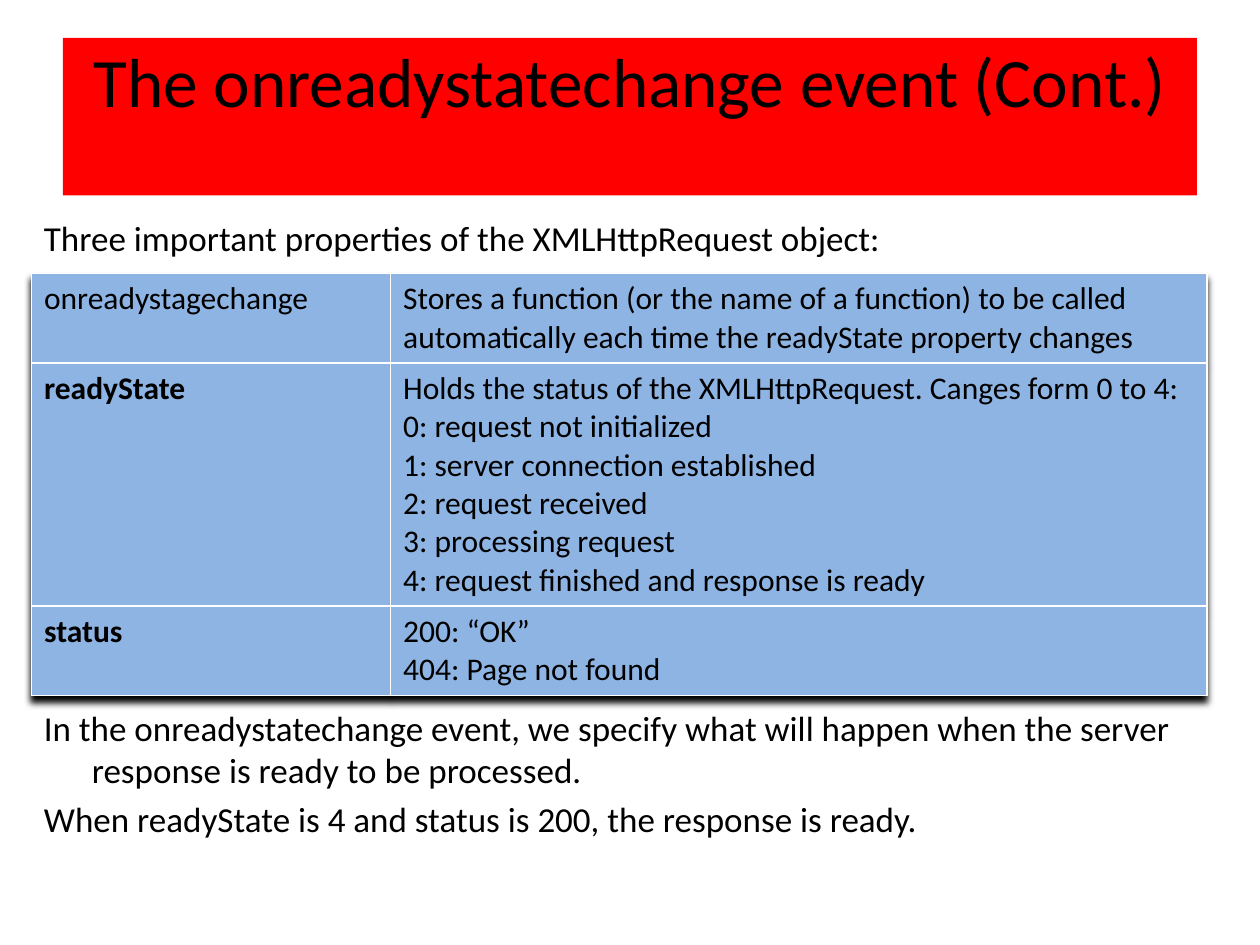
from typing import NamedTuple

from lxml.etree import SubElement
from pptx import Presentation
from pptx.dml.color import RGBColor
from pptx.enum.shapes import MSO_SHAPE
from pptx.enum.text import MSO_ANCHOR, PP_ALIGN
from pptx.oxml import parse_xml
from pptx.oxml.ns import nsdecls, qn
from pptx.util import Inches, Pt

RED = RGBColor(0xFF, 0x00, 0x00)
BLACK = RGBColor(0x00, 0x00, 0x00)
WHITE = RGBColor(0xFF, 0xFF, 0xFF)
LIGHT_BLUE = RGBColor(0x8E, 0xB4, 0xE3)
FONT = "Calibri"
LINE_HEIGHT = 0.305
CELL_PADDING = 0.1


class Property(NamedTuple):
    name: str
    lines: list[str]
    line_count: int
    bold: bool = True


class Passage(NamedTuple):
    top: float
    height: float
    lines: list[str]


PROPERTIES = [
    Property(
        "onreadystagechange",
        ["Stores a function (or the name of a function) to be called "
         "automatically each time the readyState property changes"],
        2,
        bold=False,
    ),
    Property(
        "readyState",
        ["Holds the status of the XMLHttpRequest. Canges form 0 to 4:",
         "0: request not initialized",
         "1: server connection established",
         "2: request received",
         "3: processing request",
         "4: request finished and response is ready"],
        6,
    ),
    Property("status", ["200: “OK”", "404: Page not found"], 2),
]

PASSAGES = [
    Passage(1.67, 0.45, ["Three important properties of the XMLHttpRequest object:"]),
    Passage(5.56, 1.6, [
        "In the onreadystatechange event, we specify what will happen when "
        "the server response is ready to be processed.",
        "When readyState is 4 and status is 200, the response is ready.",
    ]),
]


def write_text(text_frame, lines: list[str], *, size: float, bold: bool = False,
               align=PP_ALIGN.LEFT, hanging: float = 0, space_before: float = 0) -> None:
    text_frame.word_wrap = True
    for index, line in enumerate(lines):
        paragraph = text_frame.add_paragraph() if index else text_frame.paragraphs[0]
        paragraph.alignment = align
        if index:
            paragraph.space_before = Pt(space_before)
        if hanging:
            properties = paragraph._p.get_or_add_pPr()
            properties.set("marL", str(Inches(hanging)))
            properties.set("indent", str(-Inches(hanging)))
        run = paragraph.add_run()
        run.text = line
        run.font.name = FONT
        run.font.size = Pt(size)
        run.font.bold = bold
        run.font.color.rgb = BLACK


def draw_title(slide, text: str) -> None:
    shape = slide.shapes.add_shape(
        MSO_SHAPE.RECTANGLE, Inches(0.5), Inches(0.3), Inches(9), Inches(1.25))
    shape.shadow.inherit = False
    shape.fill.solid()
    shape.fill.fore_color.rgb = RED
    shape.line.fill.background()
    shape.text_frame.vertical_anchor = MSO_ANCHOR.TOP
    shape.text_frame.margin_top = 0
    write_text(shape.text_frame, [text], size=39.6, align=PP_ALIGN.CENTER)


def draw_passage(slide, passage: Passage) -> None:
    box = slide.shapes.add_textbox(
        Inches(0.25), Inches(passage.top), Inches(9.75), Inches(passage.height))
    write_text(box.text_frame, passage.lines, size=20, hanging=0.38, space_before=4)


def format_cell(cell) -> None:
    properties = cell._tc.get_or_add_tcPr()
    for side in ("a:lnL", "a:lnR", "a:lnT", "a:lnB"):
        line = SubElement(properties, qn(side), w=str(Pt(1)))
        fill = SubElement(line, qn("a:solidFill"))
        SubElement(fill, qn("a:srgbClr"), val=str(WHITE))
    cell.fill.solid()
    cell.fill.fore_color.rgb = LIGHT_BLUE


def add_table_shadow(table) -> None:
    table._tbl.tblPr.insert(0, parse_xml(
        f'<a:effectLst {nsdecls("a")}>'
        f'<a:outerShdw blurRad="{Inches(0.05)}" dist="{Inches(0.05)}" '
        f'dir="5400000" rotWithShape="0"><a:srgbClr val="{BLACK}"/></a:outerShdw>'
        '</a:effectLst>'))


def draw_table(slide, entries: list[Property]) -> None:
    heights = [entry.line_count * LINE_HEIGHT + CELL_PADDING for entry in entries]
    table = slide.shapes.add_table(
        len(entries), 2, Inches(0.25), Inches(2.17),
        Inches(9.33), Inches(sum(heights))).table
    table.first_row = False
    table.horz_banding = False
    add_table_shadow(table)
    for column, width in zip(table.columns, (2.85, 6.48)):
        column.width = Inches(width)
    for row, height, entry in zip(table.rows, heights, entries):
        row.height = Inches(height)
        name_cell, description_cell = row.cells
        for cell in (name_cell, description_cell):
            format_cell(cell)
        write_text(name_cell.text_frame, [entry.name], size=18, bold=entry.bold)
        write_text(description_cell.text_frame, entry.lines, size=18)


def main() -> None:
    presentation = Presentation()
    presentation.slide_width = Inches(10)
    presentation.slide_height = Inches(7.5)
    slide = presentation.slides.add_slide(presentation.slide_layouts[6])
    draw_title(slide, "The onreadystatechange event (Cont.)")
    for passage in PASSAGES:
        draw_passage(slide, passage)
    draw_table(slide, PROPERTIES)
    presentation.save("out.pptx")


if __name__ == "__main__":
    main()
